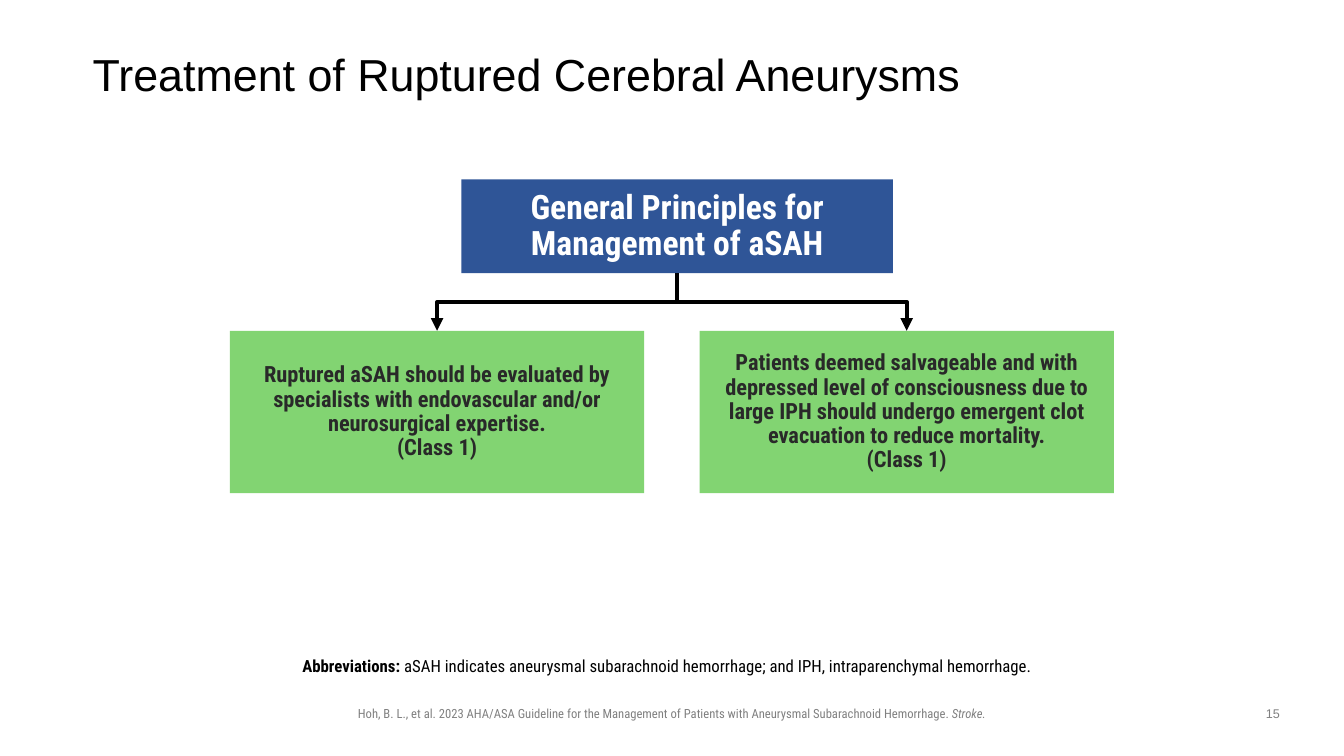
from dataclasses import dataclass

import lxml.etree
import pptx
import pptx.dml.color
import pptx.enum.shapes
import pptx.enum.text
import pptx.oxml.ns
import pptx.util

Pt = pptx.util.Pt
qn = pptx.oxml.ns.qn
ALIGN = pptx.enum.text.PP_ALIGN
ANCHOR = pptx.enum.text.MSO_ANCHOR
ROBOTO = "Roboto Condensed"


@dataclass
class Area:
    left: float
    top: float
    width: float
    height: float

    @property
    def mid(self) -> float:
        return self.left + self.width / 2

    @property
    def base(self) -> float:
        return self.top + self.height

    def points(self) -> list:
        return [Pt(n) for n in (self.left, self.top, self.width, self.height)]


@dataclass
class Run:
    text: str
    size: float
    tint: str
    bold: bool = False
    slant: bool = False
    face: str = ROBOTO


@dataclass
class Box:
    area: Area
    fill: str
    lines: list[Run]
    inset: tuple[float, float]


def paint(tint: str) -> pptx.dml.color.RGBColor:
    return pptx.dml.color.RGBColor.from_string(tint)


def write(frame, lines: list[list[Run]], align=ALIGN.CENTER, space: float = 1.0,
          inset: tuple[float, float, float, float] = (7.2, 3.6, 7.2, 3.6),
          anchor=ANCHOR.TOP) -> None:
    frame.word_wrap = True
    frame.auto_size = pptx.enum.text.MSO_AUTO_SIZE.NONE
    frame.vertical_anchor = anchor
    (frame.margin_left, frame.margin_top,
     frame.margin_right, frame.margin_bottom) = [Pt(n) for n in inset]
    for count, runs in enumerate(lines):
        para = frame.add_paragraph() if count else frame.paragraphs[0]
        para.alignment = align
        para.line_spacing = space
        para.space_before = Pt(0)
        for item in runs:
            run = para.add_run()
            run.text = item.text
            font = run.font
            font.name, font.size = item.face, Pt(item.size)
            font.bold, font.italic = item.bold, item.slant
            font.color.rgb = paint(item.tint)


def move(shape, area: Area) -> None:
    shape.left, shape.top, shape.width, shape.height = area.points()


def draw_box(slide, box: Box) -> None:
    shape = slide.shapes.add_shape(
        pptx.enum.shapes.MSO_SHAPE.RECTANGLE, *box.area.points())
    shape.shadow.inherit = False
    shape.fill.solid()
    shape.fill.fore_color.rgb = paint(box.fill)
    shape.line.fill.background()
    write(shape.text_frame, [[line] for line in box.lines], space=0.9,
          inset=box.inset * 2, anchor=ANCHOR.MIDDLE)


def draw_link(slide, start: Area, end: Area) -> None:
    drop = end.top - start.base
    span = abs(end.mid - start.mid)
    mid_x, mid_y = (start.mid + end.mid) / 2, start.base + drop / 2
    right = end.mid > start.mid
    side = drop / 2 if right else -drop / 2
    link = slide.shapes.add_connector(
        pptx.enum.shapes.MSO_CONNECTOR.ELBOW,
        Pt(mid_x + side), Pt(mid_y - span / 2),
        Pt(mid_x - side), Pt(mid_y + span / 2))
    link.line.color.rgb = paint("000000")
    link.line.width = Pt(3)
    props = link._element.spPr
    turn = 270 if right else 90
    props.find(qn("a:xfrm")).set("rot", str(turn * 60000))
    lxml.etree.SubElement(props.find(qn("a:ln")), qn("a:tailEnd"), type="triangle")
    lxml.etree.SubElement(props, qn("a:effectLst"))


def add_note(slide, area: Area, runs: list[Run]) -> None:
    note = slide.shapes.add_textbox(*area.points())
    write(note.text_frame, [runs])


def main() -> None:
    deck = pptx.Presentation()
    deck.slide_width, deck.slide_height = Pt(960), Pt(540)
    slide = deck.slides.add_slide(deck.slide_layouts[1])

    title = slide.shapes.title
    move(title, Area(66.2, 28.8, 828, 51.8))
    write(title.text_frame,
          [[Run("Treatment of Ruptured Cerebral Aneurysms", 32, "000000", face="Arial")]],
          ALIGN.LEFT, 0.9, (0, 0, 0, 0), ANCHOR.MIDDLE)

    body = slide.placeholders[1]
    move(body, Area(66.2, 466.6, 828, 21.6))
    props = body.text_frame.paragraphs[0]._p.get_or_add_pPr()
    props.set("marL", "0")
    props.set("indent", "0")
    lxml.etree.SubElement(props, qn("a:buNone"))
    write(body.text_frame,
          [[Run("Abbreviations: ", 12, "000000", bold=True),
            Run("aSAH indicates aneurysmal subarachnoid hemorrhage; and IPH, "
                "intraparenchymal hemorrhage.", 12, "000000")]],
          space=0.9, inset=(0, 3.6, 7.2, 3.6))

    root = Box(Area(329.6, 128.2, 308.2, 67), "2F5597",
               [Run("General Principles for Management of aSAH", 24, "FFFFFF", bold=True)],
               (0, 0))
    advice = [
        "Ruptured aSAH should be evaluated by specialists with endovascular "
        "and/or neurosurgical expertise.",
        "Patients deemed salvageable and with depressed level of consciousness due to "
        "large IPH should undergo emergent clot evacuation to reduce mortality.",
    ]
    draw_box(slide, root)
    for place, text in enumerate(advice):
        leaf = Box(Area(164.2 + 335.5 * place, 236.3, 296, 115.9), "82D472",
                   [Run(line, 16, "292929", bold=True) for line in (text, "(Class 1)")],
                   (7.2, 3.6))
        draw_box(slide, leaf)
        draw_link(slide, root.area, leaf.area)

    add_note(slide, Area(211.7, 500.4, 536.4, 18),
             [Run("Hoh, B. L., et al. 2023 AHA/ASA Guideline for the Management of "
                  "Patients with Aneurysmal Subarachnoid Hemorrhage. ", 9, "808080"),
              Run("Stroke.", 9, "808080", slant=True)])
    add_note(slide, Area(894.2, 500.4, 30.2, 18.7),
             [Run("15", 9, "808080", face="Arial")])
    deck.save("out.pptx")


if __name__ == "__main__":
    main()
